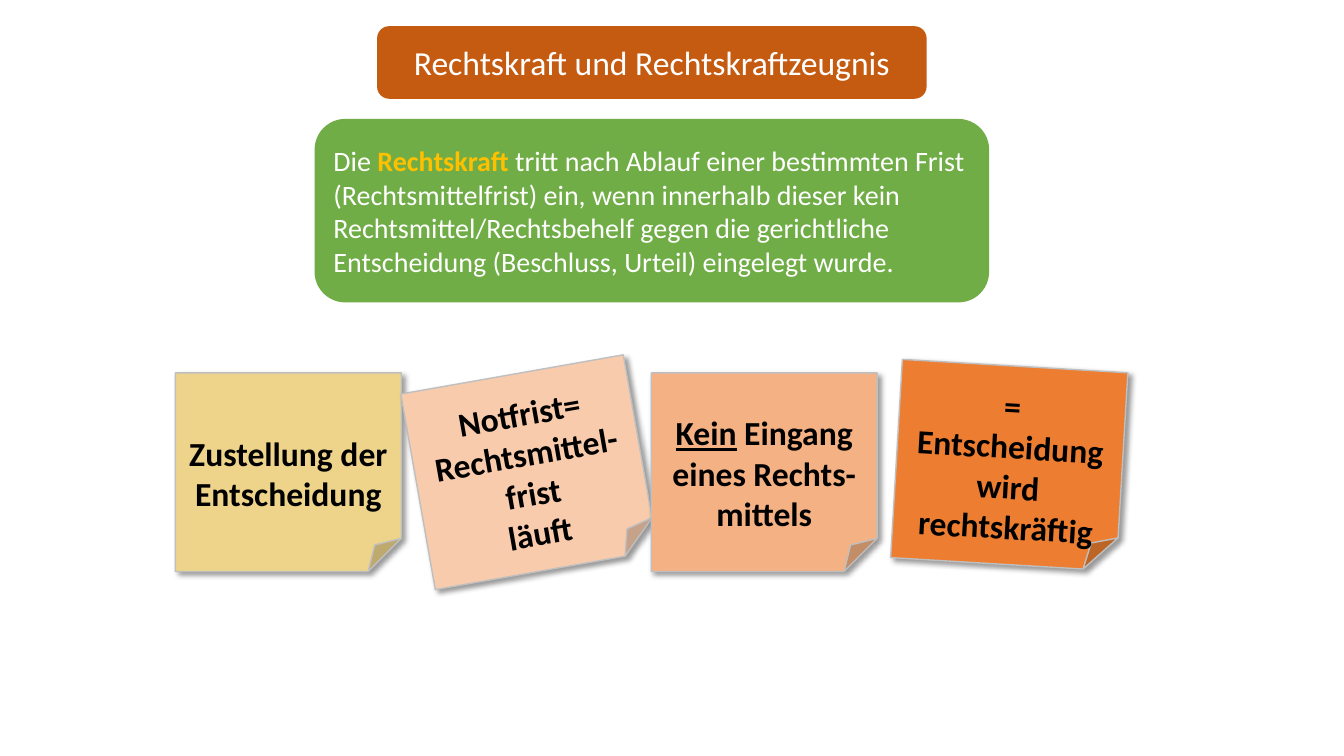
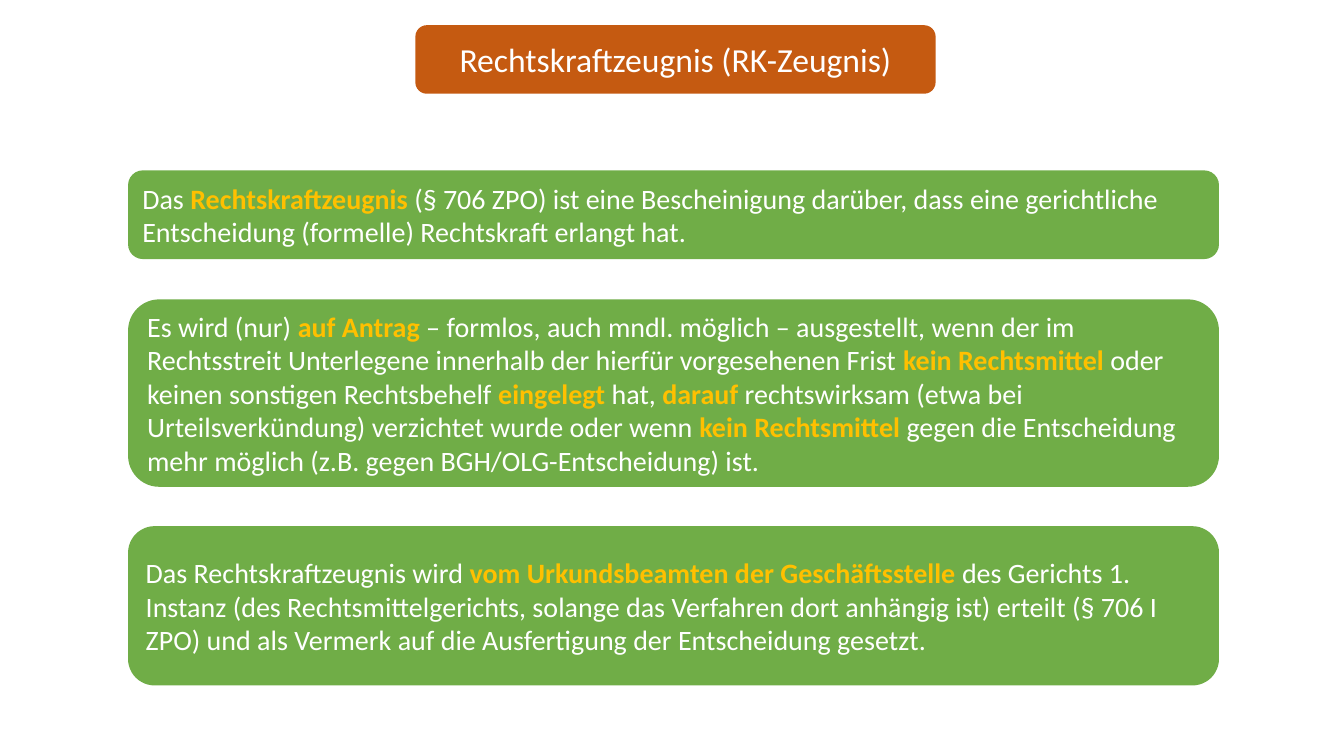
"""Build two slides on Rechtskraft and the Rechtskraftzeugnis."""
from dataclasses import dataclass

from lxml.etree import SubElement
from pptx import Presentation
from pptx.dml.color import RGBColor
from pptx.enum.shapes import MSO_SHAPE
from pptx.enum.text import MSO_ANCHOR, MSO_AUTO_SIZE, PP_ALIGN
from pptx.oxml.ns import qn
from pptx.util import Inches, Pt


@dataclass(frozen=True)
class Theme:
    font: str = "Calibri"
    title_size: int = 24
    body_size: int = 20
    note_size: int = 24
    white: str = "FFFFFF"
    black: str = "000000"
    title_fill: str = "C55A11"
    box_fill: str = "70AD47"
    accent: str = "FFC000"
    note_line: str = "BFBFBF"


T = Theme()


def write(shape, text, *, size, color=T.white, bold=False, align=PP_ALIGN.LEFT,
          accent=None, underline=False, top=0.05):
    """Write text, one paragraph a line; parts between asterisks are emphasised."""
    tf = shape.text_frame
    tf.word_wrap = True
    tf.auto_size = MSO_AUTO_SIZE.NONE
    tf.vertical_anchor = MSO_ANCHOR.MIDDLE
    tf.margin_top = Inches(top)
    for i, line in enumerate(text.split("\n")):
        p = tf.add_paragraph() if i else tf.paragraphs[0]
        p.alignment = align
        for j, part in enumerate(line.split("*")):
            if not part:
                continue
            strong = j % 2 == 1
            r = p.add_run()
            r.text = part
            r.font.name = T.font
            r.font.size = Pt(size)
            r.font.bold = bold or strong
            r.font.underline = underline and strong
            r.font.color.rgb = RGBColor.from_string(accent if accent and strong else color)


def add_box(s, kind, at, fill, line=None):
    """Add a filled preset shape without a shadow."""
    sp = s.shapes.add_shape(kind, *map(Inches, at))
    sp.shadow.inherit = False
    sp.fill.solid()
    sp.fill.fore_color.rgb = RGBColor.from_string(fill)
    if line:
        sp.line.color.rgb = RGBColor.from_string(line)
        sp.line.width = Pt(1)
    else:
        sp.line.fill.background()
    return sp


SLIDES = [
    ("Rechtskraft und Rechtskraftzeugnis", (3.74, 0.26, 5.45, 0.72), [
        ((3.12, 1.18, 6.69, 1.82),
         "Die *Rechtskraft* tritt nach Ablauf einer bestimmten Frist (Rechtsmittelfrist) ein, "
         "wenn innerhalb dieser kein Rechtsmittel/Rechtsbehelf gegen die gerichtliche "
         "Entscheidung (Beschluss, Urteil) eingelegt wurde."),
    ], [
        (1.74, 3.7, 0, "EED48A", "Zustellung der Entscheidung"),
        (4.13, 3.7, 350, "F8CBAD", "Notfrist= Rechtsmittel-frist\nläuft"),
        (6.46, 3.7, 0, "F4B183", "*Kein* Eingang eines Rechts-mittels"),
        (8.89, 3.63, 3.4, "ED7D31", "=\nEntscheidung wird rechtskräftig"),
    ]),
    ("Rechtskraftzeugnis (RK-Zeugnis)", (4.12, 0.25, 5.16, 0.68), [
        ((1.27, 1.69, 10.82, 0.88),
         "Das *Rechtskraftzeugnis* (§ 706 ZPO) ist eine Bescheinigung darüber, dass eine "
         "gerichtliche Entscheidung (formelle) Rechtskraft erlangt hat."),
        ((1.27, 2.97, 10.82, 1.86),
         "Es wird (nur) *auf Antrag* – formlos, auch mndl. möglich – ausgestellt, wenn der im "
         "Rechtsstreit Unterlegene innerhalb der hierfür vorgesehenen Frist *kein Rechtsmittel* "
         "oder keinen sonstigen Rechtsbehelf *eingelegt* hat, *darauf* rechtswirksam (etwa bei "
         "Urteilsverkündung) verzichtet wurde oder wenn *kein Rechtsmittel* gegen die "
         "Entscheidung mehr möglich (z.B. gegen BGH/OLG-Entscheidung) ist."),
        ((1.27, 5.22, 10.82, 1.58),
         "Das Rechtskraftzeugnis wird *vom Urkundsbeamten der Geschäftsstelle* des Gerichts 1. "
         "Instanz (des Rechtsmittelgerichts, solange das Verfahren dort anhängig ist) erteilt "
         "(§ 706 I ZPO) und als Vermerk auf die Ausfertigung der Entscheidung gesetzt."),
    ], []),
]

prs = Presentation()
prs.slide_width, prs.slide_height = Inches(13.33), Inches(7.5)

for heading, place, boxes, notes in SLIDES:
    s = prs.slides.add_slide(prs.slide_layouts[5])
    add_box(s, MSO_SHAPE.ROUNDED_RECTANGLE, place, T.title_fill)
    title = s.shapes.title
    title.left, title.top, title.width, title.height = map(Inches, place)
    write(title, heading, size=T.title_size, align=PP_ALIGN.CENTER)
    s.shapes._spTree.append(title._element)

    for at, text in boxes:
        sp = add_box(s, MSO_SHAPE.ROUNDED_RECTANGLE, at, T.box_fill)
        write(sp, text, size=T.body_size, accent=T.accent)

    for left, top, angle, fill, text in notes:
        sp = add_box(s, MSO_SHAPE.FOLDED_CORNER, (left, top, 2.24, 1.97), fill, T.note_line)
        sp.rotation = angle
        effects = sp._element.spPr.find(qn("a:effectLst"))
        shadow = SubElement(effects, qn("a:outerShdw"), blurRad=str(Pt(4)), dist=str(Pt(3)),
                            dir=str(45 * 60000), algn="tl", rotWithShape="0")
        tint = SubElement(shadow, qn("a:srgbClr"), val=T.black)
        SubElement(tint, qn("a:alpha"), val="40000")
        write(sp, text, size=T.note_size, color=T.black, bold=True,
              align=PP_ALIGN.CENTER, underline=True, top=0.39)

prs.save("out.pptx")
